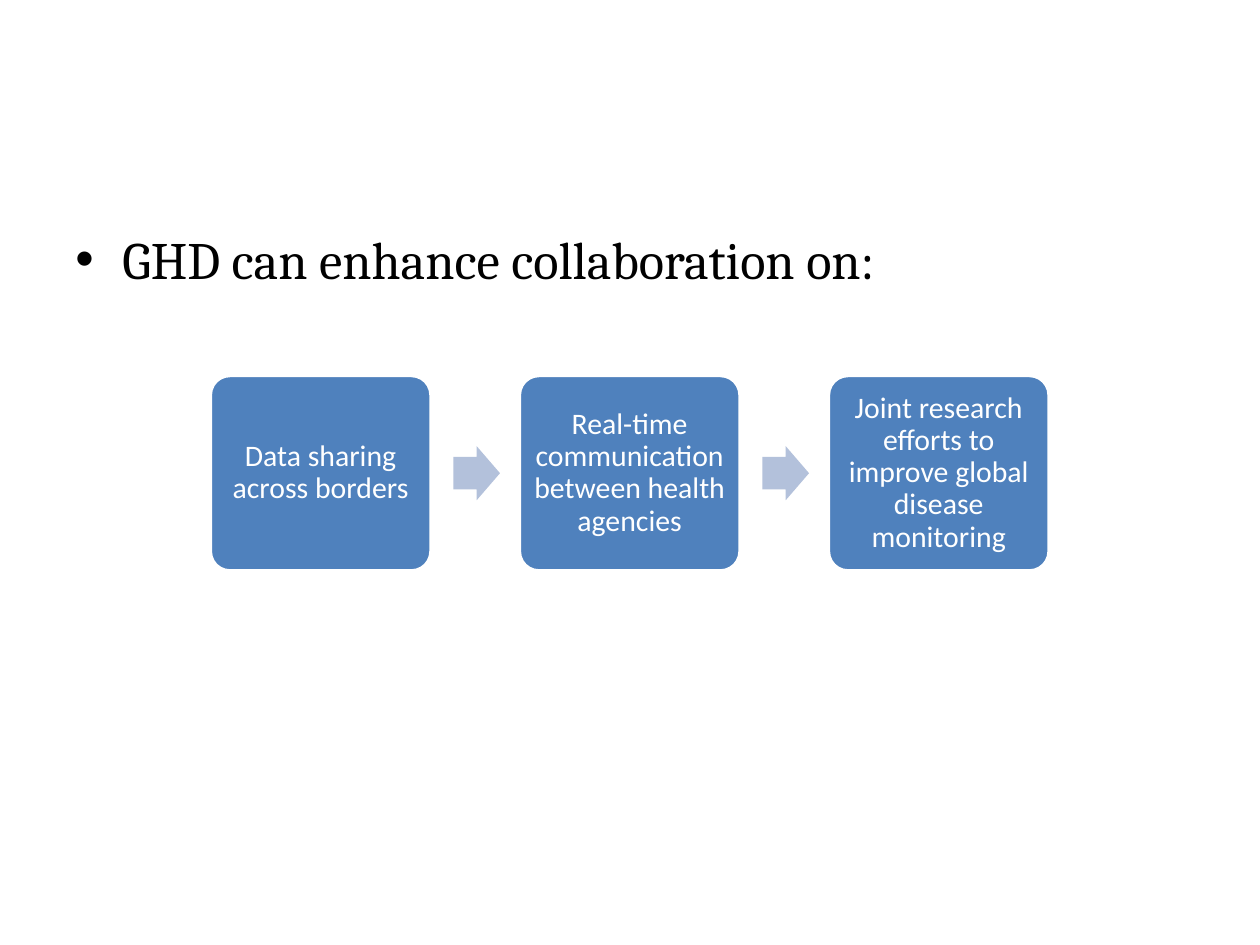
import dataclasses

import lxml.etree
import pptx
import pptx.dml.color
import pptx.enum.shapes
import pptx.enum.text
import pptx.oxml.ns
import pptx.util

Cm = pptx.util.Cm
Pt = pptx.util.Pt
RGBColor = pptx.dml.color.RGBColor
ShapeType = pptx.enum.shapes.MSO_SHAPE


@dataclasses.dataclass(frozen=True)
class Theme:
    """Colours, fonts and type sizes of the slide."""
    black: str = "000000"
    white: str = "FFFFFF"
    step: str = "4F81BD"
    arrow: str = "B3C1DB"
    heading_font: str = "Cambria"
    heading_size: int = 30
    step_font: str = "Calibri"
    step_size: int = 17


THEME = Theme()
STEPS = (
    "Data sharing across borders",
    "Real-time communication between health agencies",
    "Joint research efforts to improve global disease monitoring",
)
FLOW_LEFT, FLOW_TOP, STEP_PITCH = 4.24, 7.57, 6.23
STEP_WIDTH, STEP_HEIGHT = 4.45, 3.94
ARROW_OFFSET, ARROW_WIDTH, ARROW_HEIGHT = 4.9, 0.94, 1.09


def apply_format(target, values):
    """Set each named attribute of the target."""
    for name, value in values.items():
        setattr(target, name, value)


def write_text(paragraph, text, font, size, colour):
    """Put text in a paragraph and style it."""
    paragraph.text = text
    apply_format(paragraph.font, {"name": font, "size": Pt(size)})
    paragraph.font.color.rgb = RGBColor.from_string(colour)


def add_bullet(paragraph, indent):
    """Give a paragraph a round bullet with a hanging indent."""
    properties = paragraph._p.get_or_add_pPr()
    properties.set("marL", str(indent))
    properties.set("indent", str(-indent))
    for tag, name, value in (("a:buFont", "typeface", "Arial"), ("a:buChar", "char", "•")):
        element = lxml.etree.SubElement(properties, pptx.oxml.ns.qn(tag))
        element.set(name, value)


def add_heading(slide, text):
    """Add the bulleted lead-in line."""
    box = slide.shapes.add_textbox(Cm(1.27), Cm(4.45), Cm(22.86), Cm(12.57))
    box.text_frame.word_wrap = True
    paragraph = box.text_frame.paragraphs[0]
    add_bullet(paragraph, Cm(0.95))
    write_text(paragraph, text, THEME.heading_font, THEME.heading_size, THEME.black)


def add_block(slide, kind, left, top, width, height, fill, adjustments):
    """Add a flat filled preset shape, measured in centimetres."""
    shape = slide.shapes.add_shape(kind, Cm(left), Cm(top), Cm(width), Cm(height))
    shape.shadow.inherit = False
    shape.fill.solid()
    shape.fill.fore_color.rgb = RGBColor.from_string(fill)
    shape.line.fill.background()
    for index, value in enumerate(adjustments):
        shape.adjustments[index] = value
    return shape


def add_step(slide, left, text):
    """Add one rounded step with its centred label."""
    shape = add_block(slide, ShapeType.ROUNDED_RECTANGLE, left, FLOW_TOP,
                      STEP_WIDTH, STEP_HEIGHT, THEME.step, (0.1,))
    shape.line.color.rgb = RGBColor.from_string(THEME.white)
    shape.line.width = Pt(2)
    margins = dict.fromkeys(
        ("margin_left", "margin_top", "margin_right", "margin_bottom"), Cm(0.18))
    apply_format(shape.text_frame, {
        **margins,
        "word_wrap": True,
        "vertical_anchor": pptx.enum.text.MSO_ANCHOR.MIDDLE,
    })
    paragraph = shape.text_frame.paragraphs[0]
    apply_format(paragraph, {
        "alignment": pptx.enum.text.PP_ALIGN.CENTER,
        "line_spacing": 0.9,
    })
    write_text(paragraph, text, THEME.step_font, THEME.step_size, THEME.white)


def add_flow(slide, steps):
    """Lay the steps out in a row with an arrow between neighbours."""
    arrow_top = FLOW_TOP + (STEP_HEIGHT - ARROW_HEIGHT) / 2
    for index, text in enumerate(steps):
        left = FLOW_LEFT + index * STEP_PITCH
        add_step(slide, left, text)
        if index < len(steps) - 1:
            add_block(slide, ShapeType.RIGHT_ARROW, left + ARROW_OFFSET, arrow_top,
                      ARROW_WIDTH, ARROW_HEIGHT, THEME.arrow, (0.6, 0.5))


def main():
    """Build the slide and save it."""
    presentation = pptx.Presentation()
    apply_format(presentation, {"slide_width": Cm(25.4), "slide_height": Cm(19.05)})
    slide = presentation.slides.add_slide(presentation.slide_layouts[6])
    add_heading(slide, "GHD can enhance collaboration on:")
    add_flow(slide, STEPS)
    presentation.save("out.pptx")


if __name__ == "__main__":
    main()
